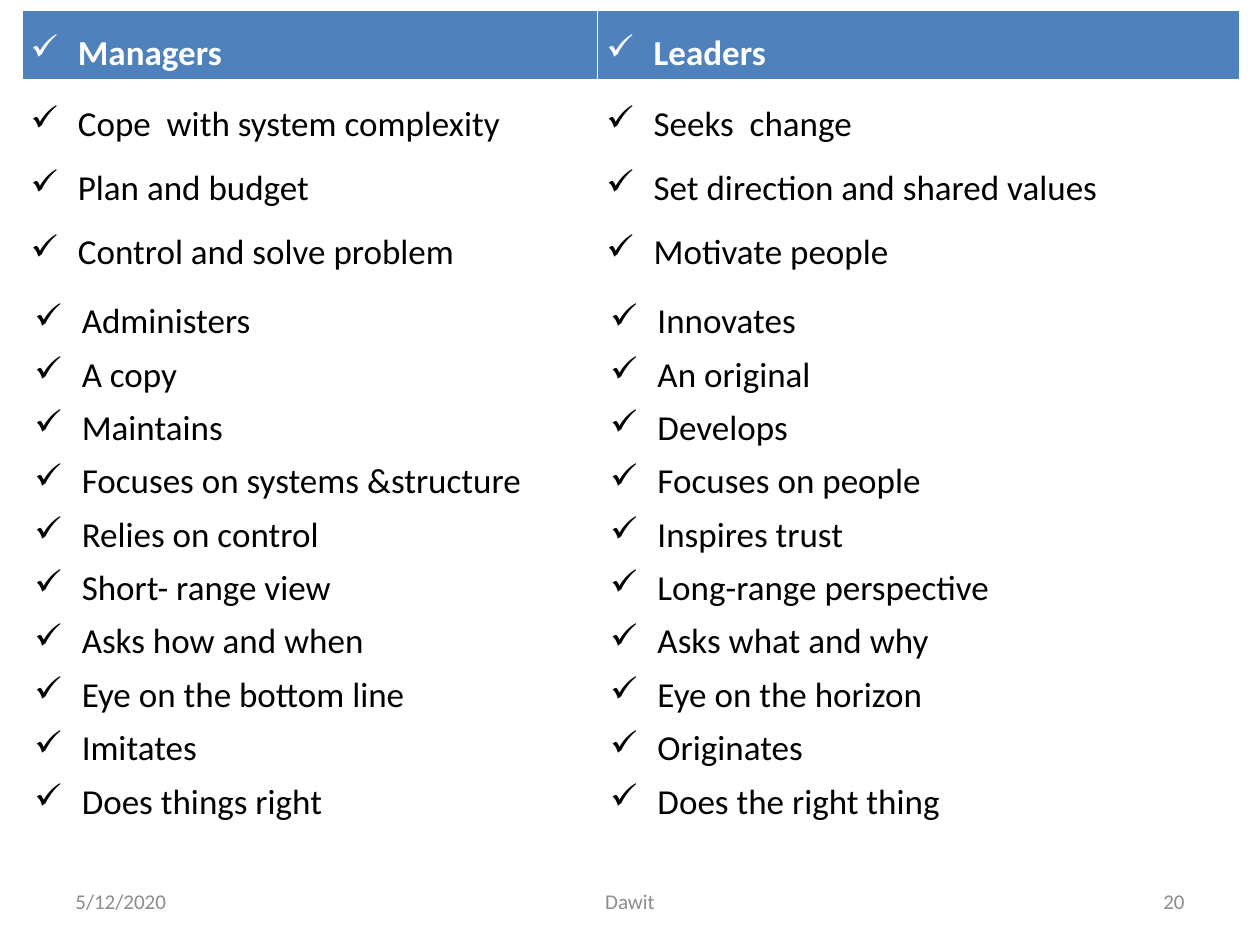
import pptx
import pptx.dml.color
import pptx.enum.text
import pptx.oxml
import pptx.oxml.ns
import pptx.util

Pt = pptx.util.Pt
ALIGN = pptx.enum.text.PP_ALIGN
ANCHOR = pptx.enum.text.MSO_ANCHOR
NAMESPACE = pptx.oxml.ns.nsdecls("a")

HEADINGS = [["Managers"], ["Leaders"]]
ROLES = [
    ["Cope  with system complexity", "Plan and budget", "Control and solve problem"],
    ["Seeks  change", "Set direction and shared values", "Motivate people"],
]
TRAITS = [
    ["Administers", "A copy", "Maintains", "Focuses on systems &structure",
     "Relies on control", "Short- range view", "Asks how and when",
     "Eye on the bottom line", "Imitates", "Does things right"],
    ["Innovates", "An original", "Develops", "Focuses on people",
     "Inspires trust", "Long-range perspective", "Asks what and why",
     "Eye on the horizon", "Originates", "Does the right thing"],
]


def color(hex_value):
    return pptx.dml.color.RGBColor.from_string(hex_value)


def style_font(paragraph, size, hex_value, bold=False):
    for run in paragraph.runs:
        run.font.name = "Calibri"
        run.font.size = Pt(size)
        run.font.bold = bold
        run.font.color.rgb = color(hex_value)


def add_check_mark(paragraph):
    properties = paragraph._p.get_or_add_pPr()
    properties.set("marL", str(Pt(27)))
    properties.set("indent", str(-Pt(27)))
    properties.append(pptx.oxml.parse_xml(f'<a:buChar {NAMESPACE} char="✓"/>'))


def set_borders(cell, top, bottom):
    properties = cell._tc.get_or_add_tcPr()
    widths = {"lnL": 1, "lnR": 1, "lnT": top, "lnB": bottom}
    for position, (side, width) in enumerate(widths.items()):
        properties.insert(position, pptx.oxml.parse_xml(
            f'<a:{side} {NAMESPACE} w="{Pt(width)}"><a:solidFill>'
            f'<a:srgbClr val="FFFFFF"/></a:solidFill></a:{side}>'))


def fill_cell(cell, items, fill, text_color, bold, spaced):
    cell.fill.solid()
    cell.fill.fore_color.rgb = color(fill)
    if spaced:
        cell.margin_left = cell.margin_right = Pt(5)
        cell.margin_top = cell.margin_bottom = 0
    cell.text_frame.text = "\n".join(items)
    for paragraph in cell.text_frame.paragraphs:
        if spaced:
            paragraph.alignment = ALIGN.JUSTIFY
            paragraph.line_spacing = 1.5
        else:
            paragraph.space_before = Pt(6)
        add_check_mark(paragraph)
        style_font(paragraph, 20, text_color, bold)


def add_comparison(slide, left, top, width, height):
    table = slide.shapes.add_table(
        3, 2, Pt(left), Pt(top), Pt(width), Pt(height)).table

    # The lower row takes the height that the first two leave
    managers_width, heading_height, roles_height = 329, 40.5, 121.5
    for column, size in zip(table.columns, (managers_width, width - managers_width)):
        column.width = Pt(size)
    traits_height = height - heading_height - roles_height
    for row, size in zip(table.rows, (heading_height, roles_height, traits_height)):
        row.height = Pt(size)

    # Fill, text colour, bold, wide line spacing, top and bottom border
    row_styles = [
        (HEADINGS, "4F81BD", "FFFFFF", True, True, 1, 3),
        (ROLES, "FFFFFF", "000000", False, True, 3, 1),
        (TRAITS, "FFFFFF", "000000", False, False, 1, 1),
    ]
    for r, (content, fill, text_color, bold, spaced, upper, lower) in enumerate(row_styles):
        for c, items in enumerate(content):
            cell = table.cell(r, c)
            fill_cell(cell, items, fill, text_color, bold, spaced)
            set_borders(cell, upper, lower)


def add_footer(slide, left, top, width, height):
    side_width, center_width = 168, 228
    parts = [
        ("5/12/2020", 0, side_width, ALIGN.LEFT),
        ("Dawit", (width - center_width) / 2, center_width, ALIGN.CENTER),
        ("20", width - side_width, side_width, ALIGN.RIGHT),
    ]
    for text, offset, part_width, alignment in parts:
        frame = slide.shapes.add_textbox(
            Pt(left + offset), Pt(top), Pt(part_width), Pt(height)).text_frame
        frame.word_wrap = True
        frame.vertical_anchor = ANCHOR.MIDDLE
        frame.text = text
        frame.paragraphs[0].alignment = alignment
        style_font(frame.paragraphs[0], 12, "8C8C8C")


def main():
    presentation = pptx.Presentation()
    presentation.slide_width = Pt(720)
    presentation.slide_height = Pt(540)
    slide = presentation.slides.add_slide(presentation.slide_layouts[6])
    add_comparison(slide, left=12.5, top=6, width=696, height=564)
    add_footer(slide, left=36, top=500.5, width=648, height=28.75)
    presentation.save("out.pptx")


if __name__ == "__main__":
    main()
